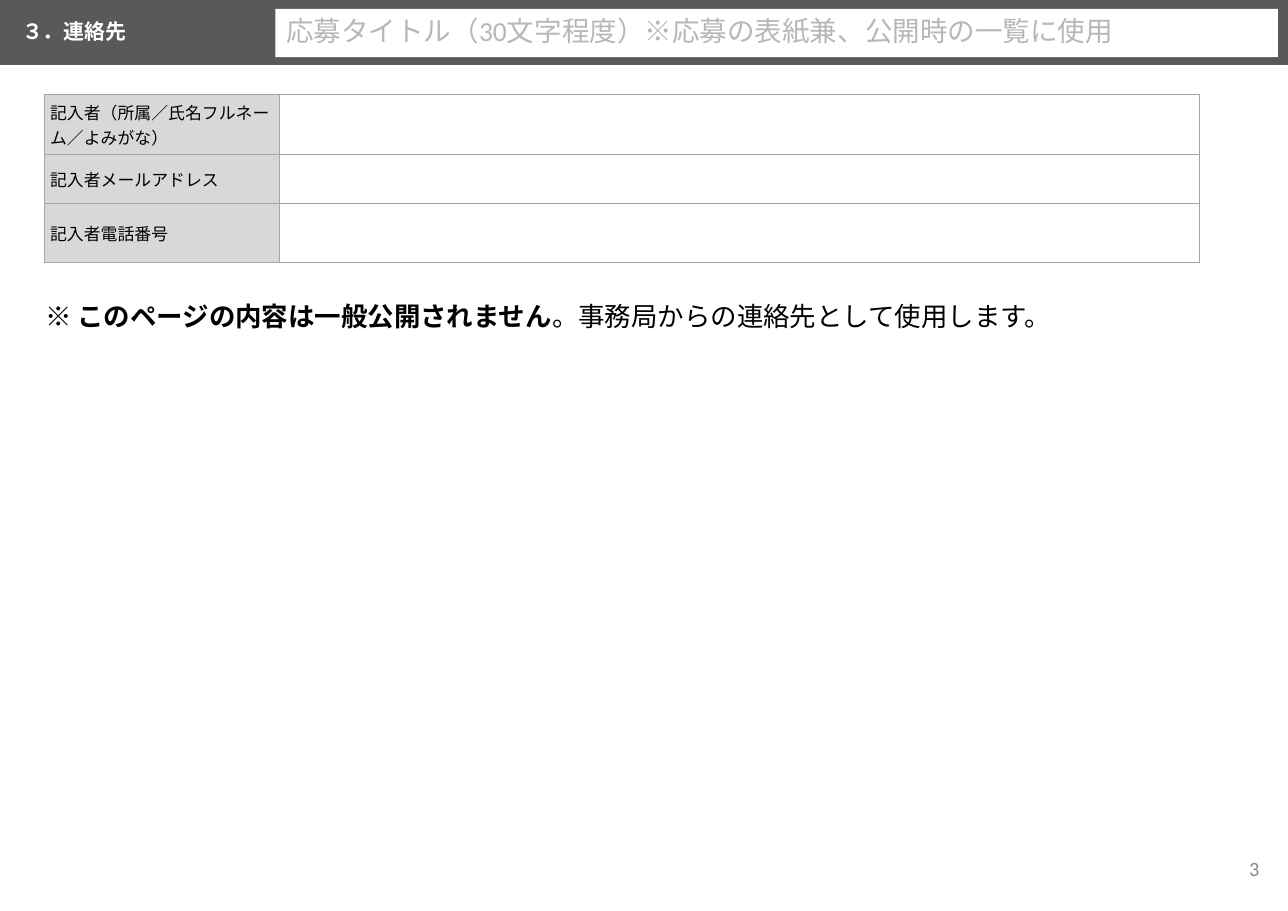
"""Build the contact page of an application form."""
from dataclasses import dataclass

from lxml.etree import SubElement
from pptx import Presentation
from pptx.dml.color import RGBColor
from pptx.enum.lang import MSO_LANGUAGE_ID
from pptx.enum.shapes import MSO_SHAPE
from pptx.enum.text import MSO_ANCHOR, MSO_AUTO_SIZE, PP_ALIGN
from pptx.oxml.ns import qn
from pptx.util import Pt


@dataclass(frozen=True)
class Theme:
    band: str = "595959"
    paper: str = "FFFFFF"
    ink: str = "000000"
    hint: str = "B7B7B7"
    number: str = "888888"
    label: str = "D8D8D8"
    border: str = "A5A5A5"
    main_font: str = "Calibri"
    table_font: str = "Arial"
    title_size: float = 13.7
    hint_size: float = 18
    label_size: float = 11
    note_size: float = 17.3
    number_size: float = 13.2


def write(frame, *pieces, font=Theme.main_font, size, color, bold=(),
          align=PP_ALIGN.LEFT, spacing=1.0, anchor=MSO_ANCHOR.MIDDLE,
          margins=(7.2, 3.6)):
    frame.word_wrap = True
    frame.auto_size = MSO_AUTO_SIZE.NONE
    frame.vertical_anchor = anchor
    frame.margin_left = frame.margin_right = Pt(margins[0])
    frame.margin_top = frame.margin_bottom = Pt(margins[1])
    paragraph = frame.paragraphs[0]
    paragraph.alignment = align
    paragraph.line_spacing = spacing
    for piece in pieces:
        run = paragraph.add_run()
        run.text = piece
        run.font.name = font
        run.font.size = Pt(size)
        run.font.bold = piece in bold
        run.font.color.rgb = RGBColor.from_string(color)
        run.font.language_id = MSO_LANGUAGE_ID.JAPANESE


class FormPage:
    def __init__(self, slide, theme):
        self.slide = slide
        self.theme = theme

    def title(self, text, left, top, width, height, **style):
        title = self.slide.shapes.title
        title.left, title.top = Pt(left), Pt(top)
        title.width, title.height = Pt(width), Pt(height)
        write(title.text_frame, text, bold=(text,), **style)
        return title

    def rectangle(self, left, top, width, height, fill):
        shape = self.slide.shapes.add_shape(
            MSO_SHAPE.RECTANGLE, Pt(left), Pt(top), Pt(width), Pt(height))
        shape.shadow.inherit = False
        shape.fill.solid()
        shape.fill.fore_color.rgb = RGBColor.from_string(fill)
        shape.line.fill.background()
        return shape

    def text(self, left, top, width, height, *pieces, **style):
        box = self.slide.shapes.add_textbox(
            Pt(left), Pt(top), Pt(width), Pt(height))
        write(box.text_frame, *pieces, **style)

    def border(self, cell):
        properties = cell._tc.get_or_add_tcPr()
        for side in ("a:lnL", "a:lnR", "a:lnT", "a:lnB"):
            line = SubElement(properties, qn(side), w=str(Pt(0.75)))
            fill = SubElement(line, qn("a:solidFill"))
            SubElement(fill, qn("a:srgbClr"), val=self.theme.border)

    def form(self, left, top, widths, heights, labels):
        table = self.slide.shapes.add_table(
            len(labels), len(widths), Pt(left), Pt(top),
            Pt(sum(widths)), Pt(sum(heights))).table
        table.first_row = table.horz_banding = False
        for column, width in zip(table.columns, widths):
            column.width = Pt(width)
        for row, height, label in zip(table.rows, heights, labels):
            row.height = Pt(height)
            for cell, fill in zip(row.cells, (self.theme.label, self.theme.paper)):
                self.border(cell)
                cell.fill.solid()
                cell.fill.fore_color.rgb = RGBColor.from_string(fill)
            label_cell = row.cells[0]
            label_cell.margin_left = label_cell.margin_right = Pt(3.6)
            label_cell.vertical_anchor = MSO_ANCHOR.MIDDLE
            run = label_cell.text_frame.paragraphs[0].add_run()
            run.text = label
            run.font.name = self.theme.table_font
            run.font.size = Pt(self.theme.label_size)
            run.font.color.rgb = RGBColor.from_string(self.theme.ink)
            run.font.language_id = MSO_LANGUAGE_ID.JAPANESE


def main():
    theme = Theme()
    presentation = Presentation()
    presentation.slide_width, presentation.slide_height = Pt(841.68), Pt(595.44)
    slide = presentation.slides.add_slide(presentation.slide_layouts[5])
    page = FormPage(slide, theme)

    title = page.title("３．連絡先", 7.2, 5.76, 817.92, 31.68,
                       size=theme.title_size, color=theme.paper, spacing=0.9)
    band = page.rectangle(0, 0, 841.68, 42.48, theme.band)
    title.element.addprevious(band.element)

    entry = page.rectangle(180, 5.76, 655.2, 31.68, theme.paper)
    write(entry.text_frame, "応募タイトル（30文字程度）※応募の表紙兼、公開時の一覧に使用",
          size=theme.hint_size, color=theme.hint, spacing=0.9)

    page.form(29.16, 61.92, (153.36, 601.2), (38.88, 31.68, 38.88),
              ("記入者（所属／氏名フルネーム／よみがな）",
               "記入者メールアドレス", "記入者電話番号"))

    private = "このページの内容は一般公開されません"
    page.text(29.52, 195.84, 666.72, 20.88,
              "※ ", private, "。事務局からの連絡先として使用します。",
              size=theme.note_size, color=theme.ink, bold=(private,),
              anchor=MSO_ANCHOR.TOP, margins=(0, 0))
    page.text(640.8, 551.52, 189.36, 31.68, "3", size=theme.number_size,
              color=theme.number, align=PP_ALIGN.RIGHT)
    presentation.save("out.pptx")


if __name__ == "__main__":
    main()
